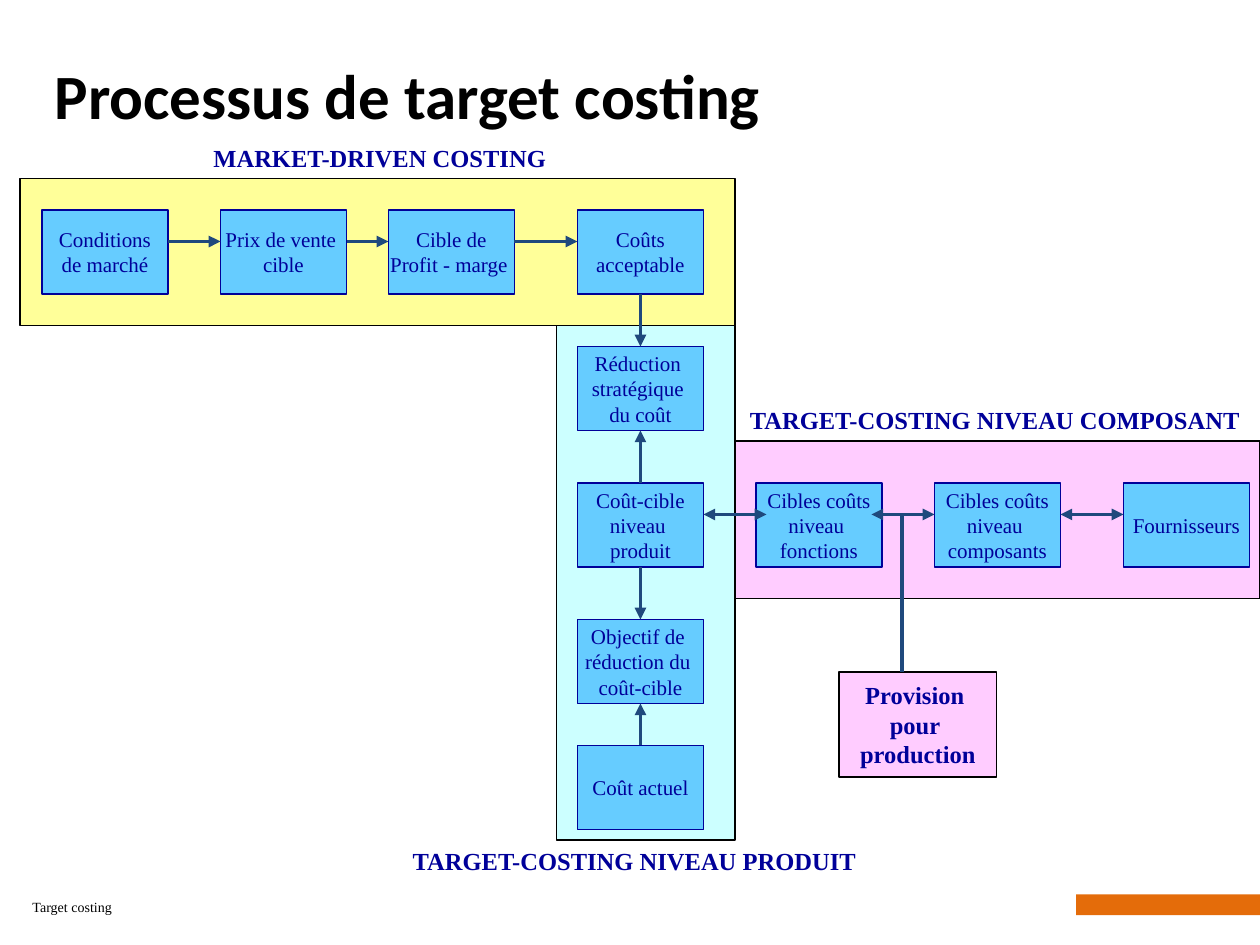
from lxml.etree import SubElement
from pptx import Presentation
from pptx.dml.color import RGBColor
from pptx.enum.shapes import MSO_CONNECTOR as Connector, MSO_SHAPE as Preset
from pptx.enum.text import MSO_ANCHOR as Anchor, MSO_AUTO_SIZE as AutoSize, PP_ALIGN as Align
from pptx.oxml.ns import qn
from pptx.util import Pt

COLORS = {
    "black": "000000", "navy": "000099", "arrow": "1F497D", "accent": "E46C0A",
    "market": "FFFF99", "product": "CCFFFF", "component": "FFCCFF", "step": "66CCFF",
}
SERIF = "Times New Roman"
STEP_WIDTH, STEP_HEIGHT = 72, 48
MARKET_TOP, PRODUCT_LEFT, COMPONENT_TOP = 120, 330, 276
ARROW_DROP = 18  # row arrows run this far below the top of the steps
TOP, BOTTOM = 0, 2  # connection sites

# Steps: left (or top) edge and text
MARKET_STEPS = [
    (24, "Conditions\nde marché"),
    (126, "Prix de vente \ncible"),
    (222, "Cible de\nProfit - marge "),
    (PRODUCT_LEFT, "Coûts\nacceptable"),
]
PRODUCT_STEPS = [
    (198, "Réduction \nstratégique \ndu coût"),
    (COMPONENT_TOP, "Coût-cible\nniveau \nproduit"),
    (354, "Objectif de \nréduction du \ncoût-cible"),
    (426, "Coût actuel"),
]
COMPONENT_STEPS = [
    (432, "Cibles coûts\nniveau \nfonctions"),
    (534, "Cibles coûts\nniveau \ncomposants"),
    (642, "Fournisseurs"),
]


def rgb(name):
    return RGBColor.from_string(COLORS[name])


def write(paragraph, text, size, color, bold=False, font=SERIF):
    for index, line in enumerate(text.split("\n")):
        if index:
            paragraph.add_line_break()
        run = paragraph.add_run()
        run.text = line
        run.font.name, run.font.size, run.font.bold = font, Pt(size), bold
        run.font.color.rgb = rgb(color)


def add_box(slide, left, top, width, height, fill, line=None):
    shape = slide.shapes.add_shape(
        Preset.RECTANGLE, Pt(left), Pt(top), Pt(width), Pt(height))
    shape.shadow.inherit = False
    shape.fill.solid()
    shape.fill.fore_color.rgb = rgb(fill)
    if line:
        shape.line.color.rgb = rgb(line)
        shape.line.width = Pt(0.75)
    else:
        shape.line.fill.background()
    return shape


def fill_text(shape, text, size, bold=False):
    frame = shape.text_frame
    frame.word_wrap = False
    frame.vertical_anchor = Anchor.MIDDLE
    paragraph = frame.paragraphs[0]
    paragraph.alignment = Align.CENTER
    write(paragraph, text, size, "navy", bold)


def add_step(slide, left, top, text):
    shape = add_box(slide, left, top, STEP_WIDTH, STEP_HEIGHT, "step", "navy")
    fill_text(shape, text, 12)
    return shape


def add_label(slide, left, top, width, text):
    label = slide.shapes.add_textbox(Pt(left), Pt(top), Pt(width), Pt(24))
    fill_text(label, text, 14, bold=True)
    label.text_frame.auto_size = AutoSize.SHAPE_TO_FIT_TEXT


def add_line(slide, start=(0, 0), end=(0, 0), arrows=()):
    connector = slide.shapes.add_connector(
        Connector.STRAIGHT, *(Pt(value) for value in (*start, *end)))
    connector.line.color.rgb = rgb("arrow")
    connector.line.width = Pt(2.25)
    for name in arrows:
        SubElement(connector.line._get_or_add_ln(), qn(f"a:{name}"), type="triangle")
    SubElement(connector._element.spPr, qn("a:effectLst"))
    return connector


def join_steps(slide, source, source_site, target, target_site):
    connector = add_line(slide, arrows=["tailEnd"])
    connector.begin_connect(source, source_site)
    connector.end_connect(target, target_site)


def add_title(slide):
    title = slide.shapes.title
    title.left, title.top, title.width, title.height = Pt(24), Pt(18), Pt(696), Pt(72)
    title.text_frame.vertical_anchor = Anchor.MIDDLE
    paragraph = title.text_frame.paragraphs[0]
    paragraph.alignment = Align.LEFT
    write(paragraph, "Processus de target costing", 36, "black", True, "Calibri")


def add_footer(slide):
    add_box(slide, 615, 511, 105, 12, "accent")
    footer = slide.shapes.add_textbox(Pt(11.5), Pt(510), Pt(66), Pt(16.5))
    footer.text_frame.word_wrap = True
    write(footer.text_frame.paragraphs[0], "Target costing", 8, "black")


def main():
    presentation = Presentation()
    presentation.slide_width, presentation.slide_height = Pt(720), Pt(540)
    slide = presentation.slides.add_slide(presentation.slide_layouts[5])
    add_title(slide)
    add_footer(slide)

    # Zones and their labels
    add_box(slide, 11.5, 102, 408.5, 84, "market", "black")
    add_box(slide, 318, 186, 102, 294, "product", "black")
    add_box(slide, 420, 252, 300, 90, "component", "black")
    provision = add_box(slide, 479.5, 384, 90, 60, "component", "black")
    fill_text(provision, "Provision \npour \nproduction", 14, bold=True)
    add_label(slide, 114, 78, 206, "MARKET-DRIVEN COSTING")
    add_label(slide, 420, 228, 297, "TARGET-COSTING NIVEAU COMPOSANT")
    add_label(slide, 227.5, 480, 270, "TARGET-COSTING NIVEAU PRODUIT")

    # Steps
    market = [add_step(slide, left, MARKET_TOP, text) for left, text in MARKET_STEPS]
    product = [add_step(slide, PRODUCT_LEFT, top, text) for top, text in PRODUCT_STEPS]
    for left, text in COMPONENT_STEPS:
        add_step(slide, left, COMPONENT_TOP, text)

    # Market row: each step leads to the next
    level = MARKET_TOP + ARROW_DROP
    for (left, _), (next_left, _) in zip(MARKET_STEPS, MARKET_STEPS[1:]):
        add_line(slide, (left + STEP_WIDTH, level), (next_left, level), ["tailEnd"])

    # Product column
    reduction, target_cost, objective, current_cost = product
    join_steps(slide, market[-1], BOTTOM, reduction, TOP)
    join_steps(slide, target_cost, TOP, reduction, BOTTOM)
    join_steps(slide, target_cost, BOTTOM, objective, TOP)
    join_steps(slide, current_cost, TOP, objective, BOTTOM)

    # Component row: two-way arrows of equal length, and the provision
    level = COMPONENT_TOP + ARROW_DROP
    add_line(slide, (515.5, 384), (515.5, level))
    for left in (402, 498, 606):
        add_line(slide, (left, level), (left + 36, level), ["headEnd", "tailEnd"])

    presentation.save("out.pptx")


if __name__ == "__main__":
    main()
